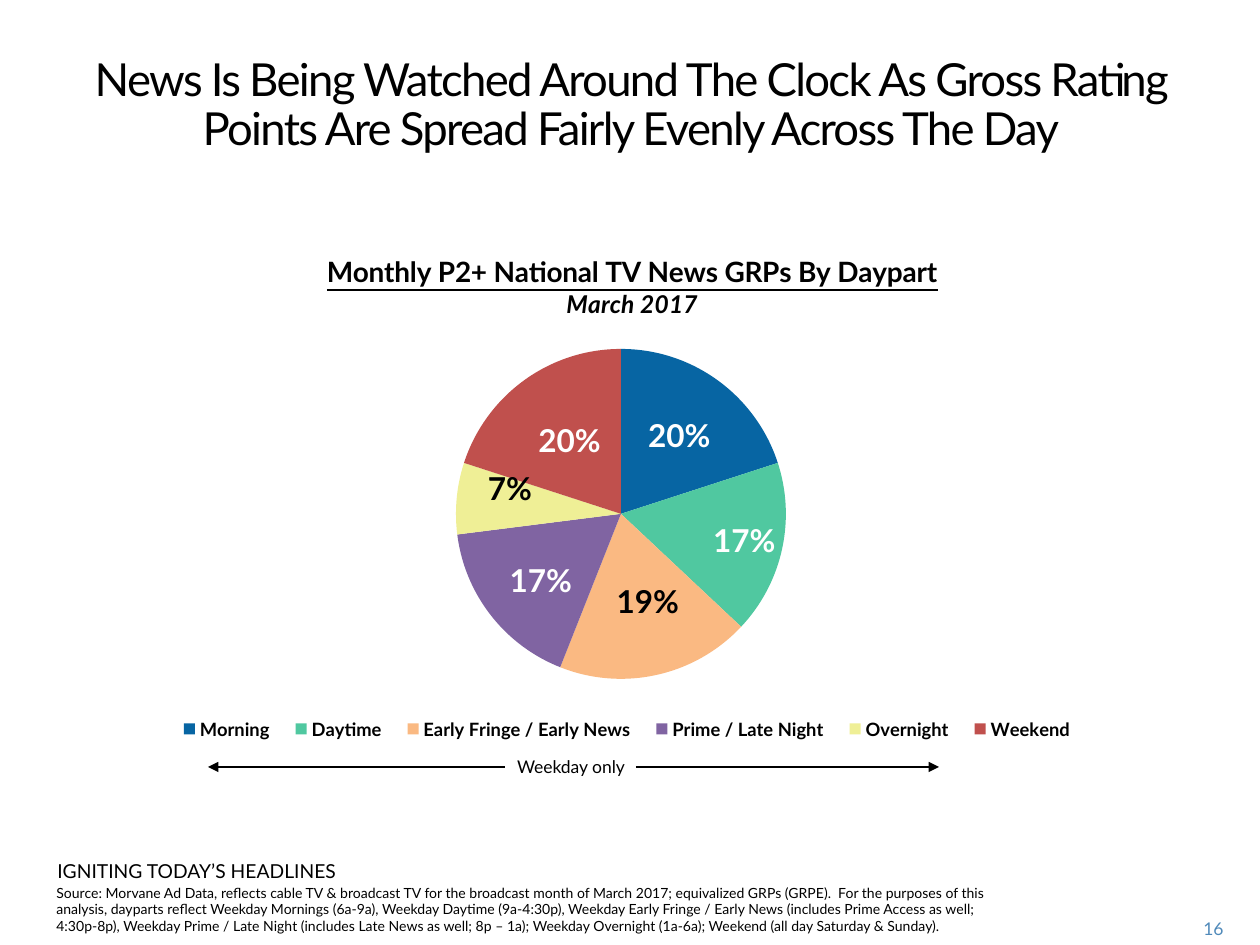
from dataclasses import dataclass

from lxml.etree import SubElement
from pptx import Presentation
from pptx.chart.data import CategoryChartData
from pptx.dml.color import RGBColor
from pptx.enum.chart import XL_CHART_TYPE, XL_LABEL_POSITION, XL_LEGEND_POSITION
from pptx.enum.shapes import MSO_CONNECTOR
from pptx.enum.text import MSO_ANCHOR, MSO_AUTO_SIZE, PP_ALIGN
from pptx.oxml import parse_xml
from pptx.oxml.ns import qn
from pptx.util import Emu, Pt

CHART = (156, 210, 945, 570)
PARTS = [
    ("Morning", 0.2, "0765A3", "FFFFFF", (10, -12)),
    ("Daytime", 0.17, "50C8A0", "FFFFFF", (43, 8)),
    ("Early Fringe / Early News", 0.19, "FAB982", "000000", (9, 7)),
    ("Prime / Late Night", 0.17, "8064A2", "FFFFFF", (-15, 16)),
    ("Overnight", 0.07, "EFEF96", "000000", (-29, -18)),
    ("Weekend", 0.2, "C0504D", "FFFFFF", (-3, -7)),
]
SOURCE = (
    "Source: Morvane Ad Data, reflects cable TV & broadcast TV for the broadcast "
    "month of March 2017; equivalized GRPs (GRPE).  For the purposes of this "
    "analysis, dayparts reflect Weekday Mornings (6a-9a), Weekday Daytime "
    "(9a-4:30p), Weekday Early Fringe / Early News (includes Prime Access as well; "
    "4:30p-8p), Weekday Prime / Late Night (includes Late News as well; 8p – 1a); "
    "Weekday Overnight (1a-6a); Weekend (all day Saturday & Sunday)."
)


@dataclass(frozen=True)
class Theme:
    face: str = "Lato"
    ink: str = "000000"
    page: str = "508ABA"
    title: int = 26
    lead: int = 28
    label: int = 18
    head: int = 16
    month: int = 14
    tag: int = 11
    key: float = 10.5
    note: int = 10
    small: int = 8


def px(num):
    return Emu(round(num * 914400 / 126))


class Deck:
    def __init__(self, theme):
        self.theme = theme
        self.file = Presentation()
        self.file.slide_width, self.file.slide_height = px(1260), px(945)
        self.slide = self.file.slides.add_slide(self.file.slide_layouts[5])

    def style(self, font, size, color=None, bold=False):
        font.name = self.theme.face
        font.size = Pt(size)
        font.bold = bold
        font.color.rgb = RGBColor.from_string(color or self.theme.ink)

    def title(self, text, box):
        shape = self.slide.shapes.title
        shape.left, shape.top, shape.width, shape.height = map(px, box)
        frame = shape.text_frame
        frame.text = text
        frame.word_wrap = True
        frame.auto_size = MSO_AUTO_SIZE.NONE
        frame.vertical_anchor = MSO_ANCHOR.TOP
        line = frame.paragraphs[0]
        line.alignment = PP_ALIGN.CENTER
        line.line_spacing = Pt(self.theme.lead)
        run = line.runs[0]
        self.style(run.font, self.theme.title)
        run._r.get_or_add_rPr().set("spc", "-100")

    def text(self, text, box, size, align=PP_ALIGN.LEFT, color=None):
        frame = self.slide.shapes.add_textbox(*map(px, box)).text_frame
        frame.text = text
        frame.word_wrap = True
        line = frame.paragraphs[0]
        line.alignment = align
        self.style(line.runs[0].font, size, color)

    def arrow(self, start, end, top):
        line = self.slide.shapes.add_connector(
            MSO_CONNECTOR.STRAIGHT, px(start), px(top), px(end), px(top))
        line.line.width = Pt(1)
        line.line.color.rgb = RGBColor.from_string(self.theme.ink)
        SubElement(line.line._get_or_add_ln(), qn("a:tailEnd"), type="triangle")
        SubElement(line._element.spPr, qn("a:effectLst"))

    def place(self, node, index, box, inner=False, edge=True):
        for old in node.findall(qn("c:layout")):
            node.remove(old)
        layout = parse_xml(
            '<c:layout xmlns:c="http://schemas.openxmlformats.org/'
            'drawingml/2006/chart"><c:manualLayout/></c:layout>')
        spot = layout[0]
        if inner:
            SubElement(spot, qn("c:layoutTarget"), val="inner")
        if edge:
            SubElement(spot, qn("c:xMode"), val="edge")
            SubElement(spot, qn("c:yMode"), val="edge")
            box = (box[0] - CHART[0], box[1] - CHART[1], *box[2:])
        for name, num, full in zip("xywh", box, CHART[2:] * 2):
            SubElement(spot, qn(f"c:{name}"), val=f"{num / full:.4f}")
        node.insert(index, layout)

    def pie(self, head, parts):
        data = CategoryChartData(number_format="0%")
        data.categories = [part[0] for part in parts]
        data.add_series("Series 1", [part[1] for part in parts])
        chart = self.slide.shapes.add_chart(
            XL_CHART_TYPE.PIE, *map(px, CHART), data).chart
        self.style(chart.font, self.theme.label)
        plot = chart.plots[0]
        plot.vary_by_categories = True
        row = plot.series[0]
        labels = row.data_labels
        labels.show_value = True
        labels.number_format = "0%"
        labels.number_format_is_linked = False
        self.style(labels.font, self.theme.label, "FFFFFF", True)
        for index, (_, _, fill, color, _) in enumerate(parts):
            point = row.points[index]
            point.format.fill.solid()
            point.format.fill.fore_color.rgb = RGBColor.from_string(fill)
            label = point.data_label
            self.style(label.font, self.theme.label, color, True)
            label.position = XL_LABEL_POSITION.CENTER
        for node, part in zip(chart.element.iter(qn("c:dLbl")), parts):
            self.place(node, 1, part[4], edge=False)
        self.place(next(chart.element.iter(qn("c:plotArea"))), 0,
                   (456, 349, 330, 330), inner=True)
        self.legend(chart)
        self.head(chart, head)

    def legend(self, chart):
        chart.has_legend = True
        key = chart.legend
        key.position = XL_LEGEND_POSITION.BOTTOM
        key.include_in_layout = False
        self.style(key.font, self.theme.key, bold=True)
        self.place(next(chart.element.iter(qn("c:legend"))), 1, (164, 712, 926, 34))

    def head(self, chart, text):
        chart.has_title = True
        frame = chart.chart_title.text_frame
        frame.text = text
        top, month = (line.runs[0].font for line in frame.paragraphs)
        self.style(top, self.theme.head, bold=True)
        top.underline = True
        self.style(month, self.theme.month, bold=True)
        month.italic = True
        self.place(next(chart.element.iter(qn("c:title"))), 1, (323, 249))


def main():
    theme = Theme()
    deck = Deck(theme)
    deck.title("News Is Being Watched Around The Clock As Gross Rating Points "
               "Are Spread Fairly Evenly Across The Day", (26, 50, 1210, 82))
    deck.pie("Monthly P2+ National TV News GRPs By Daypart\nMarch 2017", PARTS)
    deck.text("Weekday only", (184, 750, 774, 34), theme.note, PP_ALIGN.CENTER)
    deck.arrow(636, 939, 767)
    deck.arrow(505, 208, 767)
    deck.text(SOURCE, (44, 878, 995, 67), theme.small)
    deck.text("IGNITING TODAY’S HEADLINES", (45, 853, 343, 59), theme.tag)
    deck.text("16", (1159, 912, 77, 32), theme.note, PP_ALIGN.RIGHT, theme.page)
    deck.file.save("out.pptx")


if __name__ == "__main__":
    main()
